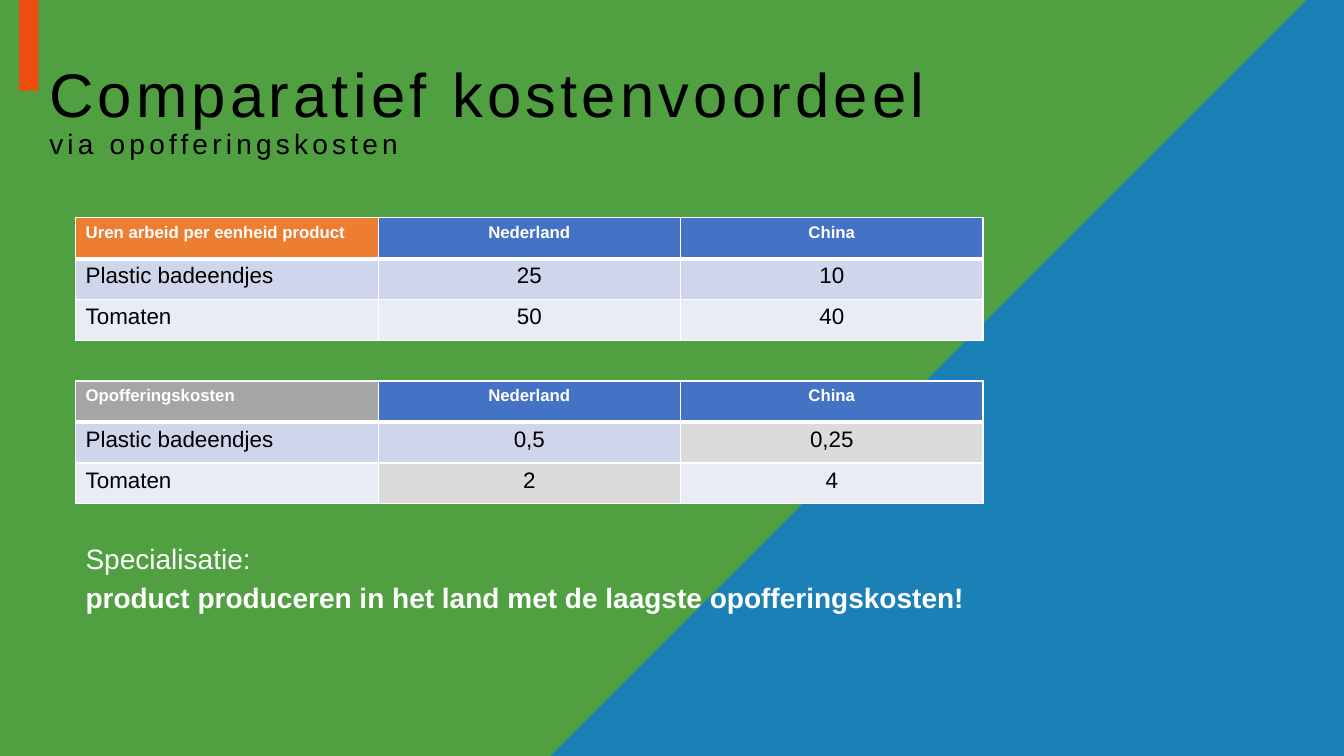
import pptx
import pptx.util
import pptx.dml.color
import pptx.enum.shapes
import pptx.enum.text
import pptx.oxml
import pptx.oxml.ns
from dataclasses import dataclass
from pptx.util import Inches


@dataclass(frozen=True)
class Theme:
    font: str = "Arial"
    green: str = "258812"
    blue: str = "1A80B6"
    red: str = "ED4D0F"
    black: str = "000000"
    white: str = "FFFFFF"
    header: str = "4472C4"
    hours: str = "ED7D31"
    costs: str = "A5A5A5"
    bands: tuple = ("CFD5EA", "E9EBF5")
    lowest: str = "DBDBDB"
    title_size: int = 44
    text_size: int = 20
    body_size: int = 16
    header_size: int = 12


theme = Theme()
rgb = pptx.dml.color.RGBColor.from_string
qn = pptx.oxml.ns.qn


def style_run(run, size, color, bold=False):
    run.font.name = theme.font
    run.font.size = pptx.util.Pt(size)
    run.font.color.rgb = rgb(color)
    run.font.bold = bold


def paint(shape, color):
    shape.shadow.inherit = False
    shape.fill.solid()
    shape.fill.fore_color.rgb = rgb(color)
    shape.line.fill.background()


deck = pptx.Presentation()
deck.slide_width = Inches(13.33)
deck.slide_height = Inches(7.5)
slide = deck.slides.add_slide(deck.slide_layouts[6])
rectangle = pptx.enum.shapes.MSO_SHAPE.RECTANGLE

backdrop = slide.shapes.add_shape(rectangle, 0, 0, deck.slide_width, deck.slide_height)
paint(backdrop, theme.green)
backdrop_color = backdrop.fill._xPr.find(qn("a:solidFill"))[0]
backdrop_color.append(pptx.oxml.parse_xml(
    f'<a:alpha {pptx.oxml.ns.nsdecls("a")} val="80000"/>'))

outline = slide.shapes.build_freeform(Inches(12.96), 0)
outline.add_line_segments([
    (deck.slide_width, 0),
    (deck.slide_width, deck.slide_height),
    (Inches(5.46), deck.slide_height),
])
paint(outline.convert_to_shape(), theme.blue)

marker = slide.shapes.add_shape(rectangle, Inches(0.19), 0, Inches(0.19), Inches(0.9))
paint(marker, theme.red)

heading = slide.shapes.add_textbox(
    Inches(0.39), Inches(0.39), Inches(12.61), Inches(1.45)).text_frame
heading.word_wrap = True
heading.vertical_anchor = pptx.enum.text.MSO_ANCHOR.MIDDLE
heading_line = heading.paragraphs[0]
heading_line.text = "Comparatief kostenvoordeel\vvia opofferingskosten"
heading_line.line_spacing = 0.9
for run, size in zip(heading_line.runs, (theme.title_size, theme.text_size)):
    style_run(run, size, theme.black)
    run.font._element.set("spc", "300")

comparisons = [
    (2.16, theme.hours, [
        ("Uren arbeid per eenheid product", "Nederland", "China"),
        ("Plastic badeendjes", "25", "10"),
        ("Tomaten", "50", "40"),
    ], set()),
    (3.78, theme.costs, [
        ("Opofferingskosten", "Nederland", "China"),
        ("Plastic badeendjes", "0,5", "0,25"),
        ("Tomaten", "2", "4"),
    ], {(1, 2), (2, 1)}),
]
for top, corner_color, rows, lowest_cells in comparisons:
    table = slide.shapes.add_table(
        3, 3, Inches(0.75), Inches(top), Inches(9), Inches(1.22)).table
    for r, row in enumerate(rows):
        for c, label in enumerate(row):
            cell = table.cell(r, c)
            cell.text = label
            entry = cell.text_frame.paragraphs[0]
            if c:
                entry.alignment = pptx.enum.text.PP_ALIGN.CENTER
            if r == 0:
                style_run(entry.runs[0], theme.header_size, theme.white, True)
                color = theme.header if c else corner_color
            else:
                style_run(entry.runs[0], theme.body_size, theme.black)
                color = theme.lowest if (r, c) in lowest_cells else theme.bands[r - 1]
            for side in "LRTB":
                points = 3 if (r, side) in ((0, "B"), (1, "T")) else 1
                cell._tc.get_or_add_tcPr().append(pptx.oxml.parse_xml(
                    f'<a:ln{side} {pptx.oxml.ns.nsdecls("a")} w="{pptx.util.Pt(points)}">'
                    f'<a:solidFill><a:srgbClr val="{theme.white}"/></a:solidFill>'
                    f'</a:ln{side}>'))
            cell.fill.solid()
            cell.fill.fore_color.rgb = rgb(color)

conclusion = slide.shapes.add_textbox(
    Inches(0.75), Inches(5.32), Inches(9.7), Inches(1.5)).text_frame
conclusion.word_wrap = True
conclusion.text = (
    "Specialisatie:\n"
    "product produceren in het land met de laagste opofferingskosten!")
for sentence, bold in zip(conclusion.paragraphs, (False, True)):
    sentence.space_before = pptx.util.Pt(4)
    style_run(sentence.runs[0], theme.text_size, theme.white, bold)

deck.save("out.pptx")
